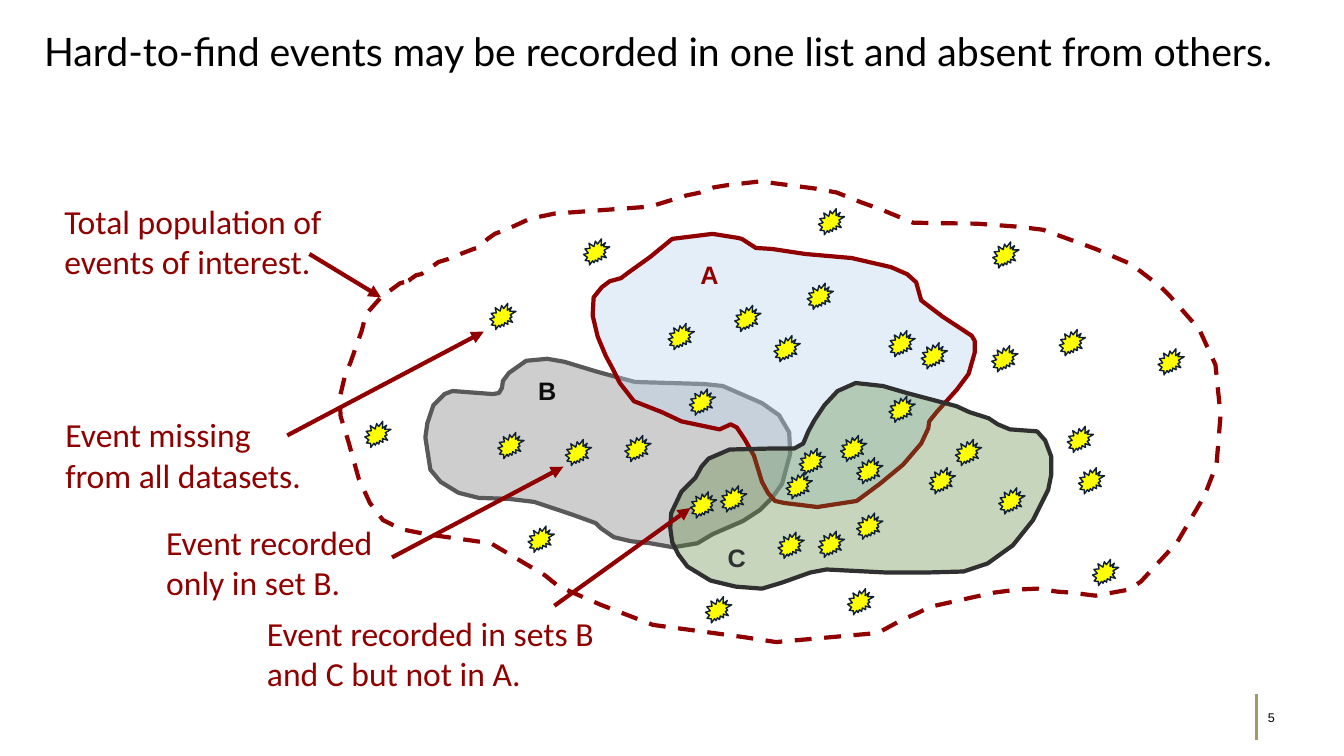
import pptx
import pptx.dml.color
import pptx.enum.dml
import pptx.enum.shapes
import pptx.enum.text
import pptx.oxml
import pptx.oxml.ns
import pptx.util

RGB = pptx.dml.color.RGBColor
RED = RGB(0x90, 0x00, 0x01)
BLACK = RGB(0x00, 0x00, 0x00)
GOLD = RGB(0xA5, 0x9A, 0x60)
YELLOW = RGB(0xFF, 0xFF, 0x00)
NAVY = RGB(0x0E, 0x1F, 0x37)
GRAY = RGB(0x7F, 0x7F, 0x7F)
SLATE = RGB(0x59, 0x59, 0x59)
BLUE = RGB(0xBD, 0xD7, 0xEE)
GREEN = RGB(0x54, 0x82, 0x35)
DARK = RGB(0x30, 0x30, 0x30)
INK = RGB(0x0D, 0x0D, 0x0D)
SEAL = 26


def grid(n):
    """Length of n grid steps of 0.0254 cm."""
    return pptx.util.Cm(n * 0.0254)


class Sketch:
    def __init__(self, deck):
        self.slide = deck.slides.add_slide(deck.slide_layouts[6])
        self.shapes = self.slide.shapes

    def add_tag(self, parent, tag, **attrs):
        item = pptx.oxml.parse_xml(f"<a:{tag} {pptx.oxml.ns.nsdecls('a')}/>")
        for key, value in attrs.items():
            item.set(key, value)
        parent.append(item)

    def text(self, words, box, size, font, color, bold=False, center=False, middle=False):
        frame = self.shapes.add_textbox(*map(grid, box)).text_frame
        frame.word_wrap = len(words) > 1
        if middle:
            frame.vertical_anchor = pptx.enum.text.MSO_ANCHOR.MIDDLE
        para = frame.paragraphs[0]
        if center:
            para.alignment = pptx.enum.text.PP_ALIGN.CENTER
        run = para.add_run()
        run.text = words
        run.font.size = pptx.util.Pt(size)
        run.font.name = font
        run.font.bold = bold
        run.font.color.rgb = color

    def outline(self, points, color, fill=None, alpha=100):
        pen = self.shapes.build_freeform(*points[0], scale=grid(1))
        pen.add_line_segments(points[1:], close=True)
        shape = pen.convert_to_shape()
        shape.shadow.inherit = False
        shape.line.color.rgb = color
        shape.line.width = pptx.util.Pt(3)
        if fill is None:
            shape.fill.background()
            shape.line.dash_style = pptx.enum.dml.MSO_LINE.DASH
        else:
            shape.fill.solid()
            shape.fill.fore_color.rgb = fill
            tint = shape.fill._xPr.find(".//" + pptx.oxml.ns.qn("a:srgbClr"))
            self.add_tag(tint, "alpha", val=str(alpha * 1000))
        self.add_tag(shape.line._get_or_add_ln(), "round")

    def event(self, left, top):
        kind = pptx.enum.shapes.MSO_SHAPE.EXPLOSION2
        seal = self.shapes.add_shape(kind, *map(grid, (left, top, SEAL, SEAL)))
        seal.shadow.inherit = False
        seal.fill.solid()
        seal.fill.fore_color.rgb = YELLOW
        seal.line.color.rgb = NAVY
        seal.line.width = pptx.util.Pt(1)

    def line(self, ends, color, width, arrow=False):
        kind = pptx.enum.shapes.MSO_CONNECTOR.STRAIGHT
        link = self.shapes.add_connector(kind, *map(grid, ends))
        link.line.color.rgb = color
        link.line.width = pptx.util.Pt(width)
        if arrow:
            self.add_tag(link.line._get_or_add_ln(), "tailEnd", type="triangle")
        self.add_tag(link._element.spPr, "effectLst")


# Outlines, in grid steps
TOTAL = [
    (401, 280), (397, 281), (378, 295), (363, 312), (359, 328), (348, 359), (342, 374),
    (337, 395), (338, 413), (346, 439), (356, 475), (367, 499), (380, 516), (398, 525),
    (423, 530), (487, 539), (541, 571), (552, 580), (564, 586), (596, 600), (648, 620),
    (737, 632), (770, 637), (871, 628), (893, 616), (911, 608), (923, 602), (986, 588),
    (1009, 585), (1029, 584), (1049, 587), (1063, 588), (1087, 591), (1120, 585),
    (1132, 577), (1168, 538), (1195, 492), (1207, 461), (1211, 412), (1206, 362),
    (1190, 327), (1161, 294), (1151, 284), (1122, 262), (1087, 247), (1035, 228),
    (1011, 225), (970, 222), (906, 221), (872, 207), (855, 201), (830, 191), (808, 187),
    (754, 180), (720, 184), (708, 186), (695, 191), (681, 194), (645, 205), (550, 212),
    (526, 217), (502, 228), (491, 232), (484, 237), (474, 246), (470, 247), (457, 252),
    (445, 257), (435, 260), (424, 268), (418, 272), (413, 273), (406, 278)]
SET_B = [
    (489, 391), (449, 388), (441, 391), (430, 402), (424, 420), (422, 434), (427, 466),
    (437, 478), (455, 489), (475, 494), (505, 495), (530, 498), (569, 511), (591, 519),
    (596, 524), (609, 533), (626, 537), (645, 539), (668, 543), (692, 539), (707, 530),
    (737, 517), (754, 506), (766, 494), (776, 480), (784, 450), (783, 429), (773, 412),
    (756, 400), (717, 383), (698, 381), (630, 379), (593, 369), (560, 359), (543, 356),
    (522, 358), (505, 370), (499, 378), (498, 385), (495, 390)]
SET_A = [
    (707, 232), (667, 237), (645, 255), (624, 270), (616, 276), (605, 279), (597, 285),
    (589, 295), (588, 313), (593, 334), (601, 353), (608, 366), (615, 380), (629, 398),
    (657, 409), (676, 418), (714, 426), (725, 421), (731, 424), (739, 436), (744, 445),
    (748, 452), (756, 478), (762, 489), (769, 497), (778, 499), (811, 503), (850, 497),
    (873, 480), (896, 461), (914, 440), (921, 425), (922, 418), (930, 408), (949, 387),
    (961, 371), (967, 350), (967, 338), (964, 333), (935, 314), (914, 298), (909, 280),
    (900, 272), (884, 265), (845, 256), (799, 252), (766, 247), (750, 246), (736, 237),
    (732, 236)]
SET_C = [
    (690, 474), (676, 488), (666, 509), (665, 524), (667, 538), (673, 550), (682, 562),
    (705, 576), (730, 582), (756, 584), (776, 578), (804, 568), (820, 565), (879, 568),
    (920, 568), (956, 567), (980, 559), (1005, 541), (1025, 516), (1040, 486),
    (1043, 471), (1043, 453), (1037, 437), (1029, 428), (1002, 426), (990, 421),
    (981, 415), (962, 409), (949, 403), (900, 390), (876, 383), (849, 380), (831, 388),
    (818, 402), (808, 417), (802, 428), (797, 440), (788, 445), (765, 445), (724, 446),
    (703, 455), (696, 463)]

RECORDED = [
    (780, 469), (793, 445), (834, 432), (850, 454), (850, 509), (812, 527), (772, 528),
    (715, 482), (685, 488), (620, 432), (561, 436), (494, 429), (663, 321), (729, 303),
    (768, 333), (801, 281), (882, 328), (914, 340), (882, 393), (948, 436), (922, 464),
    (991, 484), (684, 386)]
MISSING = [
    (1059, 423), (1070, 464), (984, 343), (1051, 327), (524, 522), (362, 418), (486, 301),
    (579, 237), (812, 207), (985, 240), (1149, 346), (1084, 555), (841, 584), (700, 592)]

LETTERS = [("A", 685, 252, RED), ("B", 524, 367, INK), ("C", 712, 533, DARK)]

# Each note: words, left, top, width, arrow
NOTES = [
    ("Total population of events of interest.", 54, 194, 306, (307, 252, 378, 295)),
    ("Event missing from all datasets.", 55, 406, 254, (285, 432, 480, 329)),
    ("Event recorded only in set B.", 155, 513, 258, (389, 553, 559, 463)),
    ("Event recorded in sets B and C but not in A.", 255, 603, 351, (550, 601, 685, 504))]


def main():
    deck = pptx.Presentation()
    deck.slide_width = pptx.util.Cm(33.87)
    deck.slide_height = pptx.util.Cm(19.05)
    page = Sketch(deck)

    # Page number and title
    page.text("5", (1248, 698, 52, 27), 9, "Arial", BLACK, middle=True)
    page.line((1247, 689, 1247, 734), GOLD, 2)
    page.text("Hard-to-find events may be recorded in one list and absent from others.",
              (34, 22, 1265, 100), 28, "Lato", BLACK)

    # Population and the three sets
    page.outline(TOTAL, RED)
    page.outline(SET_B, SLATE, GRAY, 38)
    page.outline(SET_A, RED, BLUE, 41)
    page.outline(SET_C, DARK, GREEN, 33)

    # Events
    for left, top in RECORDED + MISSING:
        page.event(left, top)

    # Set letters
    for letter, left, top, color in LETTERS:
        page.text(letter, (left, top, 37, 40), 18, "Arial", color, bold=True, center=True)

    # Notes with arrows
    for words, left, top, width, ends in NOTES:
        page.text(words, (left, top, width, 91), 24, "Calibri", RED)
        page.line(ends, RED, 3, arrow=True)

    deck.save("out.pptx")


if __name__ == "__main__":
    main()
